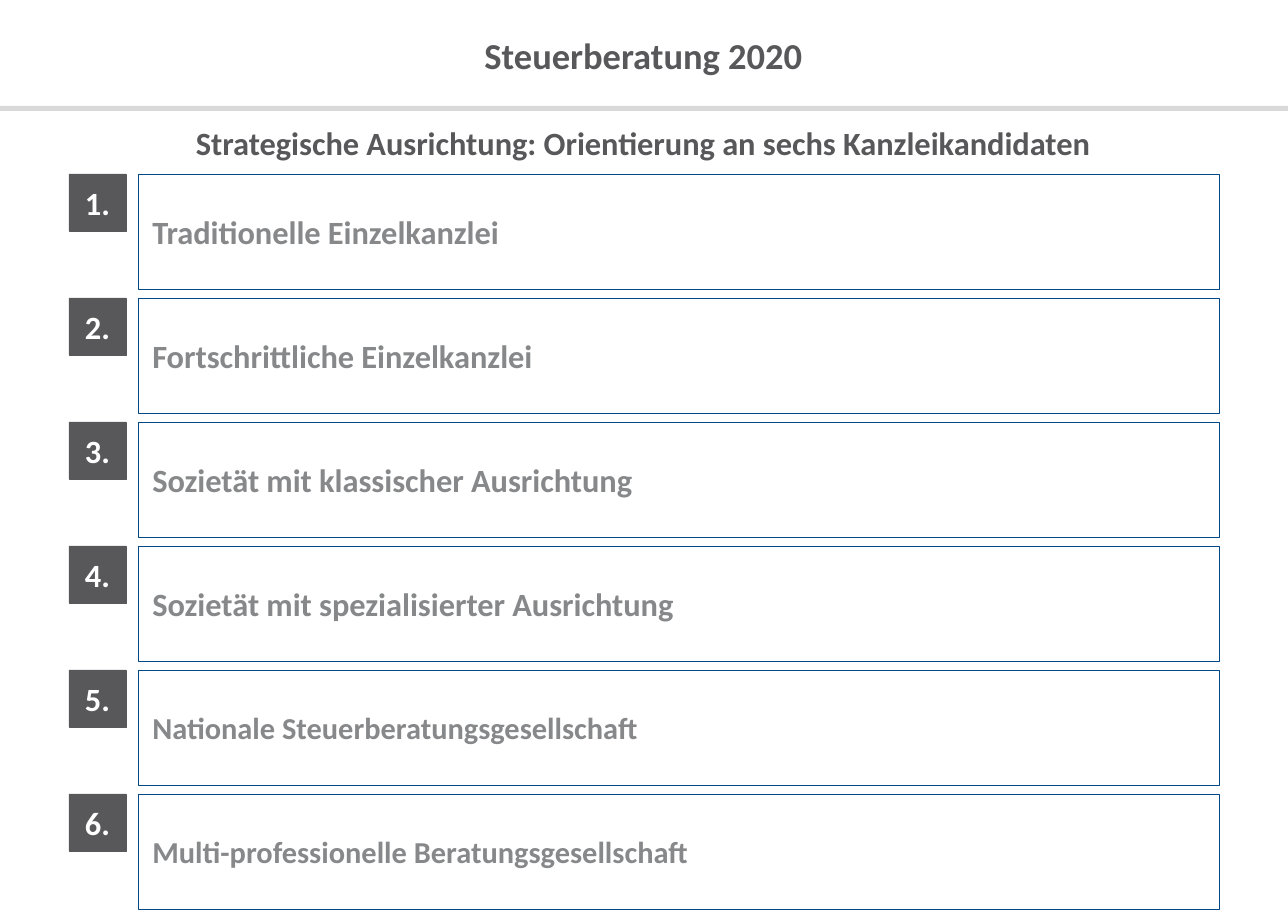
import pptx
import pptx.dml.color
import pptx.enum.shapes
import pptx.enum.text
import pptx.util

PX = 914400 / 146  # EMU per pixel
FONT = "Calibri"
DARK, GREY, BLUE, WHITE, RULE = "58585A", "87888A", "004986", "FFFFFF", "D9D9D9"
CENTER = pptx.enum.text.PP_ALIGN.CENTER
LEFT = pptx.enum.text.PP_ALIGN.LEFT

MARGIN, CONTENT_WIDTH = 69, 1149
FIRST_ROW_TOP, ROW_PITCH = 174, 124
NUMBER_SIDE = 57
NAME_LEFT, NAME_WIDTH, NAME_HEIGHT = 138, 1081, 115

# Firm types with their text size
FIRM_TYPES = [
    ("Traditionelle Einzelkanzlei", 16),
    ("Fortschrittliche Einzelkanzlei", 16),
    ("Sozietät mit klassischer Ausrichtung", 16),
    ("Sozietät mit spezialisierter Ausrichtung", 16),
    ("Nationale Steuerberatungsgesellschaft", 15),
    ("Multi-professionelle Beratungsgesellschaft", 15),
]


def px(*lengths):
    return [pptx.util.Emu(round(length * PX)) for length in lengths]


def color(hex_code):
    return pptx.dml.color.RGBColor.from_string(hex_code)


def write(shape, text, size, text_color, align=CENTER):
    frame = shape.text_frame
    frame.word_wrap = True
    frame.vertical_anchor = pptx.enum.text.MSO_ANCHOR.MIDDLE
    paragraph = frame.paragraphs[0]
    paragraph.text = text
    paragraph.alignment = align
    font = paragraph.runs[0].font
    font.name, font.size, font.bold = FONT, pptx.util.Pt(size), True
    font.color.rgb = color(text_color)


def add_heading(slide, top, height, text, size):
    heading = slide.shapes.add_textbox(*px(MARGIN, top, CONTENT_WIDTH, height))
    write(heading, text, size, DARK)


def add_box(shapes, bounds, fill, line=None):
    box = shapes.add_shape(pptx.enum.shapes.MSO_SHAPE.RECTANGLE, *px(*bounds))
    box.shadow.inherit = False
    box.fill.solid()
    box.fill.fore_color.rgb = color(fill)
    if line:
        box.line.color.rgb = color(line)
        box.line.width = pptx.util.Pt(0.25)
    else:
        box.line.fill.background()
    return box


def add_firm_type(slide, index, name, size):
    top = FIRST_ROW_TOP + index * ROW_PITCH
    row = slide.shapes.add_group_shape().shapes
    number_box = add_box(row, (MARGIN, top, NUMBER_SIDE, NUMBER_SIDE), DARK, DARK)
    write(number_box, f"{index + 1}.", 16, WHITE)
    name_box = add_box(row, (NAME_LEFT, top, NAME_WIDTH, NAME_HEIGHT), WHITE, BLUE)
    write(name_box, name, size, GREY, LEFT)


def main():
    deck = pptx.Presentation()
    deck.slide_width, deck.slide_height = px(1288, 923)
    slide = deck.slides.add_slide(deck.slide_layouts[6])

    # Header
    add_box(slide.shapes, (0, 106, 1288, 5), RULE)
    add_heading(slide, 22, 66, "Steuerberatung 2020", 18)
    add_heading(slide, 114, 57,
                "Strategische Ausrichtung: Orientierung an sechs Kanzleikandidaten", 16)

    # Numbered firm types
    for index, (name, size) in enumerate(FIRM_TYPES):
        add_firm_type(slide, index, name, size)

    deck.save("out.pptx")


if __name__ == "__main__":
    main()
